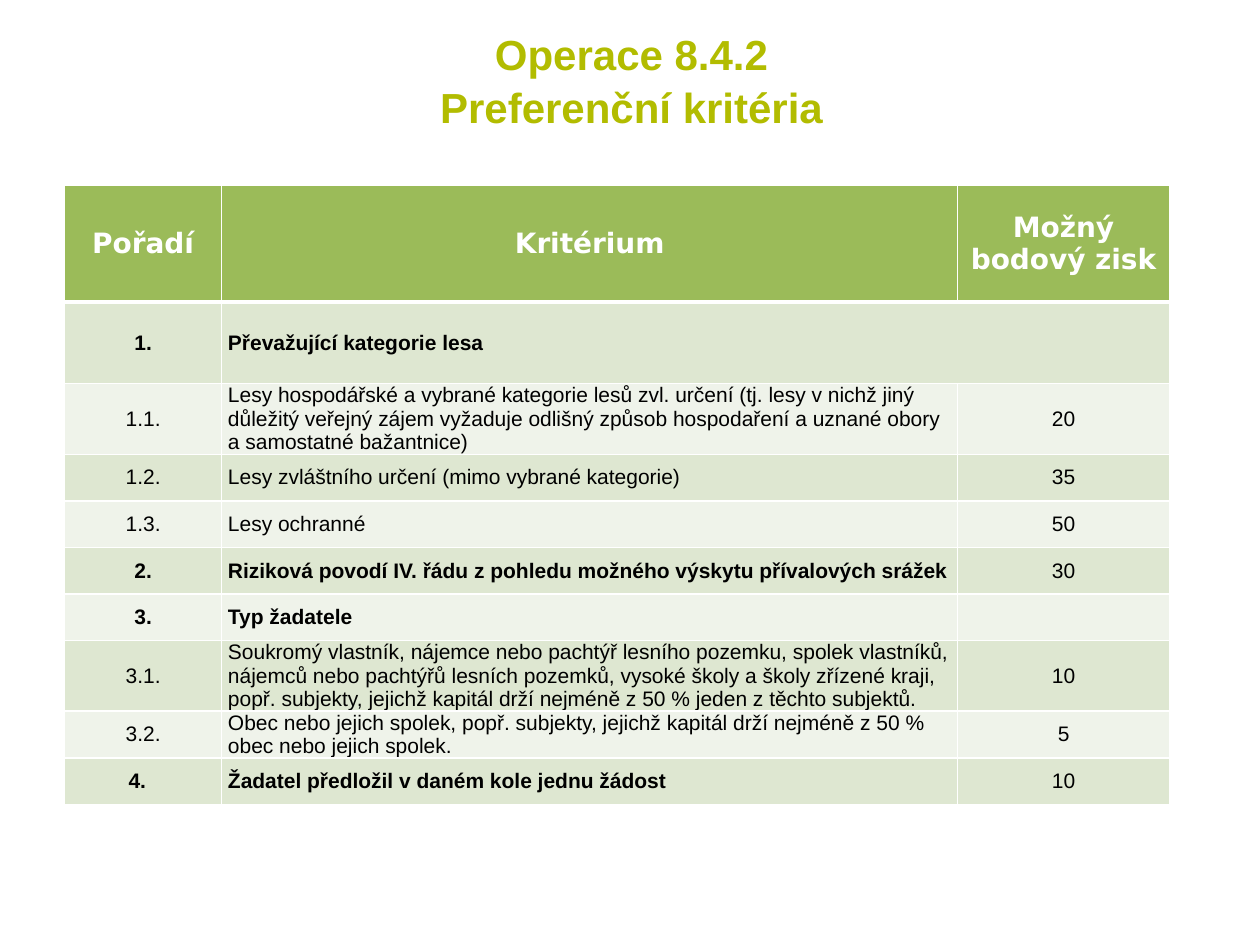
from copy import deepcopy

from lxml import etree
from pptx import Presentation
from pptx.dml.color import RGBColor
from pptx.enum.text import MSO_ANCHOR, PP_ALIGN
from pptx.oxml.ns import qn
from pptx.util import Pt

CENTER, LEFT, MIDDLE = PP_ALIGN.CENTER, PP_ALIGN.LEFT, MSO_ANCHOR.MIDDLE

TITLE = "Operace 8.4.2\nPreferenční kritéria"
HEADER = ("Pořadí", "Kritérium", "Možný bodový zisk")
ROWS = [
    ("1.", "Převažující kategorie lesa", ""),
    ("1.1.", "Lesy hospodářské a vybrané kategorie lesů zvl. určení (tj. lesy v nichž jiný "
             "důležitý veřejný zájem vyžaduje odlišný způsob hospodaření a uznané obory "
             "a samostatné bažantnice)", "20"),
    ("1.2.", "Lesy zvláštního určení (mimo vybrané kategorie)", "35"),
    ("1.3.", "Lesy ochranné", "50"),
    ("2.", "Riziková povodí IV. řádu z pohledu možného výskytu přívalových srážek", "30"),
    ("3.", "Typ žadatele", ""),
    ("3.1.", "Soukromý vlastník, nájemce nebo pachtýř lesního pozemku, spolek vlastníků, "
             "nájemců nebo pachtýřů lesních pozemků, vysoké školy a školy zřízené kraji, "
             "popř. subjekty, jejichž kapitál drží nejméně z 50 % jeden z těchto subjektů.", "10"),
    ("3.2.", "Obec nebo jejich spolek, popř. subjekty, jejichž kapitál drží nejméně z 50 % "
             "obec nebo jejich spolek.", "5"),
    ("4.", "Žadatel předložil v daném kole jednu žádost", "10"),
]
COL_WIDTHS = (89.8, 420.6, 121)
ROW_HEIGHTS = (66.7, 46.8) + (26.6,) * (len(ROWS) - 1)
LEFT_EDGE, TABLE_TOP = 36.9, 105.8
THIN, THICK = 0.91, 2.95
HEADER_FILL, BANDS = "9BBB59", ("DEE7D1", "EFF3EA")

TITLE_FONT = {"name": "Arial", "size": Pt(24), "bold": True}
HEADER_FONT = {"name": "DejaVu Sans", "size": Pt(16), "bold": True}
BODY_FONT = {"name": "Arial", "size": Pt(12)}
CELL_FORMAT = {"margin_left": Pt(3.6), "margin_right": Pt(3.6), "margin_top": 0,
               "margin_bottom": 0, "vertical_anchor": MIDDLE}


def rgb(value):
    return RGBColor.from_string(value)


def set_attrs(obj, values):
    for name, value in values.items():
        setattr(obj, name, value)


def write(p, text, font, color, align):
    p.text = text
    p.alignment = align
    for r in p.runs:
        set_attrs(r.font, font)
        r.font.color.rgb = rgb(color)


def set_borders(cell, top, bottom):
    tc_pr = cell._tc.get_or_add_tcPr()
    sides = (("a:lnL", THIN), ("a:lnR", THIN), ("a:lnT", top), ("a:lnB", bottom))
    for i, (tag, width) in enumerate(sides):
        ln = etree.Element(qn(tag), w=str(Pt(width)))
        fill = etree.SubElement(ln, qn("a:solidFill"))
        etree.SubElement(fill, qn("a:srgbClr"), val="FFFFFF")
        tc_pr.insert(i, ln)


prs = Presentation()
prs.slide_width, prs.slide_height = Pt(720), Pt(540)
s = prs.slides.add_slide(prs.slide_layouts[5])

title = s.shapes.title
set_attrs(title, {"left": Pt(LEFT_EDGE), "top": 0, "width": Pt(648), "height": Pt(90)})
title.text_frame.vertical_anchor = MIDDLE
p = title.text_frame.paragraphs[0]
write(p, TITLE, TITLE_FONT, "B2BC00", CENTER)
p.line_spacing = 1.05
for br in p._p.findall(qn("a:br")):
    br.insert(0, deepcopy(p.runs[0]._r.rPr))

table = s.shapes.add_table(len(ROWS) + 1, len(HEADER), Pt(LEFT_EDGE), Pt(TABLE_TOP),
                           Pt(sum(COL_WIDTHS)), Pt(sum(ROW_HEIGHTS))).table
for column, width in zip(table.columns, COL_WIDTHS):
    column.width = Pt(width)
for row, height in zip(table.rows, ROW_HEIGHTS):
    row.height = Pt(height)

for i, values in enumerate([HEADER] + ROWS):
    is_group = values[0].count(".") == 1
    for j, text in enumerate(values):
        cell = table.cell(i, j)
        set_attrs(cell, CELL_FORMAT)
        cell.fill.solid()
        cell.fill.fore_color.rgb = rgb(BANDS[(i - 1) % 2] if i else HEADER_FILL)
        set_borders(cell, THICK if i == 1 else THIN, THICK if i == 0 else THIN)
        font = {**BODY_FONT, "bold": is_group and j < 2} if i else HEADER_FONT
        write(cell.text_frame.paragraphs[0], text, font, "000000" if i else "FFFFFF",
              LEFT if i and j == 1 else CENTER)

table.cell(1, 1).merge(table.cell(1, 2))
table.cell(len(ROWS), 0).margin_right = Pt(10.3)

prs.save("out.pptx")
